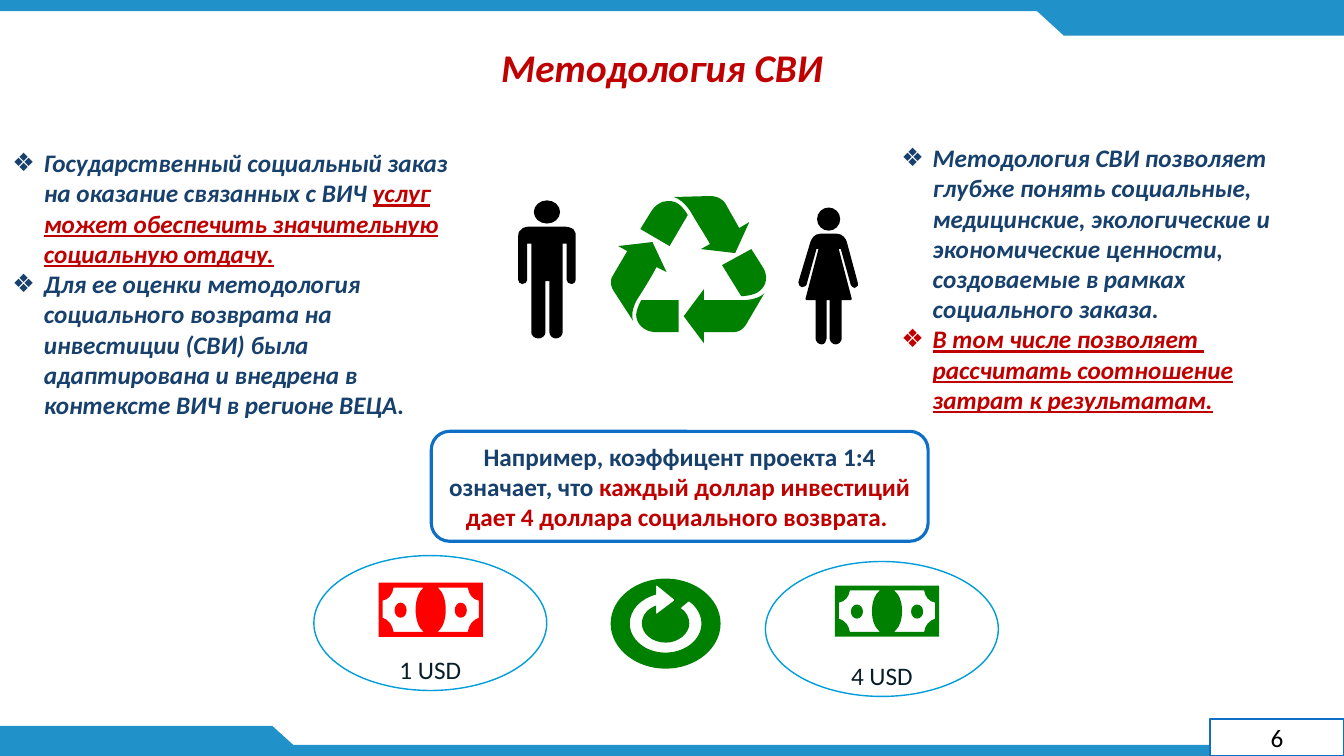
from lxml import etree
from pptx import Presentation
from pptx import util as u
from pptx.dml.color import RGBColor
from pptx.enum import shapes, text
from pptx.oxml.ns import qn

COLORS = {
    "band": "2191C9", "outline": "0F6FC6", "ellipse": "009DD9", "white": "FFFFFF",
    "navy": "17406D", "accent": "C00000", "ink": "071D28", "black": "000000",
    "green": "008000", "red": "FF0000",
}
SHAPE = shapes.MSO_SHAPE
CENTER = text.PP_ALIGN.CENTER


def add_run(paragraph, content, color="navy", size=18, **font_format):
    run = paragraph.add_run()
    run.text = content
    run.font.name = "Calibri"
    run.font.size = u.Pt(size)
    run.font.color.rgb = RGBColor.from_string(COLORS[color])
    for name, value in font_format.items():
        setattr(run.font, name, value)


def draw_icon(box, size, color, contours):
    """Scale contours drawn on a grid of the given size into a box in cm.

    A contour is a list of steps: 2 numbers are a point, 6 a Bézier curve
    from the last point, 4 an ellipse (centre and radii).
    """
    left, top, width, height = [u.Cm(value) for value in box]
    builder = None
    curve_starts = []  # positions in the path where three points form a curve
    position = 0
    for contour in contours:
        if len(contour[0]) == 4:
            cx, cy, rx, ry = contour[0]
            kx, ky = 0.55 * rx, 0.55 * ry
            contour = [(cx, cy - ry),
                       (cx + kx, cy - ry, cx + rx, cy - ky, cx + rx, cy),
                       (cx + rx, cy + ky, cx + kx, cy + ry, cx, cy + ry),
                       (cx - kx, cy + ry, cx - rx, cy + ky, cx - rx, cy),
                       (cx - rx, cy - ky, cx - kx, cy - ry, cx, cy - ry)]
        points = []
        for step in contour:
            if len(step) == 6:
                curve_starts.append(position + len(points))
            points += [(left + x * width / size[0], top + y * height / size[1])
                       for x, y in zip(step[::2], step[1::2])]
        if builder is None:
            builder = slide.shapes.build_freeform(*points[0], scale=1.0)
        else:
            builder.move_to(*points[0])
        builder.add_line_segments(points[1:], close=False)
        position += len(points)
    icon = builder.convert_to_shape()
    steps = list(icon._element.find(".//" + qn("a:path")))
    for start in curve_starts:
        curve = etree.Element(qn("a:cubicBezTo"))
        steps[start].addprevious(curve)
        for step in steps[start:start + 3]:
            curve.append(step[0])
            step.getparent().remove(step)
    icon.shadow.inherit = False
    icon.fill.solid()
    icon.fill.fore_color.rgb = RGBColor.from_string(COLORS[color])
    icon.line.fill.background()


presentation = Presentation()
presentation.slide_width, presentation.slide_height = u.Cm(33.87), u.Cm(19.05)
slide = presentation.slides.add_slide(presentation.slide_layouts.get_by_name("Two Content"))

# Header and footer bands
for kind, box, rotation in [
    (SHAPE.RECTANGLE, (0, 0, 33.87, 0.28), 0),
    (SHAPE.RECTANGLE, (0, 18.77, 33.87, 0.28), 0),
    (SHAPE.RECTANGLE, (26.8, 0.13, 7.07, 0.77), 0),
    (SHAPE.FLOWCHART_MERGE, (25.96, 0.12, 1.68, 0.77), 0),
    (SHAPE.RECTANGLE, (0, 18.29, 6.86, 0.76), 0),
    (SHAPE.FLOWCHART_MERGE, (6.02, 18.29, 1.68, 0.76), 180),
]:
    band = slide.shapes.add_shape(kind, *[u.Cm(value) for value in box])
    band.rotation = rotation
    band.shadow.inherit = False
    band.fill.solid()
    band.fill.fore_color.rgb = RGBColor.from_string(COLORS["band"])
    band.line.fill.background()

# Outlined boxes
callout_runs = [
    ("Например, коэффицент проекта 1:4 означает, что ", "navy", True),
    ("каждый доллар инвестиций дает 4 доллара социального возврата. ", "accent", True),
]
for kind, box, line_color, line_width, runs in [
    (SHAPE.FLOWCHART_CONNECTOR, (7.91, 14, 5.87, 3.4), "ellipse", 1, [("1 USD", "ink", False)]),
    (SHAPE.FLOWCHART_CONNECTOR, (19.29, 14.15, 5.87, 3.4), "ellipse", 1,
     [("4 USD", "ink", False)]),
    (SHAPE.ROUNDED_RECTANGLE, (10.87, 10.87, 12.52, 2.77), "outline", 2.25, callout_runs),
    (SHAPE.RECTANGLE, (30.49, 18.12, 3.38, 0.93), "outline", 1, [("6", "black", False)]),
]:
    panel = slide.shapes.add_shape(kind, *[u.Cm(value) for value in box])
    panel.shadow.inherit = False
    panel.fill.solid()
    panel.fill.fore_color.rgb = RGBColor.from_string(COLORS["white"])
    panel.line.color.rgb = RGBColor.from_string(COLORS[line_color])
    panel.line.width = u.Pt(line_width)
    panel.text_frame.vertical_anchor = text.MSO_ANCHOR.MIDDLE
    if kind == SHAPE.FLOWCHART_CONNECTOR:
        panel.text_frame.margin_top, panel.text_frame.margin_bottom = u.Cm(2.32), 0
    paragraph = panel.text_frame.paragraphs[0]
    paragraph.alignment = CENTER
    for content, color, bold in runs:
        add_run(paragraph, content, color, bold=bold)

# Icons
man = [
    [(28.5, 11.5, 13, 11.5)],
    [(13, 26), (8, 26, 4, 27, 3, 29), (0, 31, 0, 34, 0, 35), (0, 79), (0, 81, 2, 83, 4, 83),
     (7, 83, 9, 81, 9, 79), (9, 43), (13, 43), (13, 131), (13, 134, 16, 137, 20, 137),
     (24, 137, 27, 134, 27, 131), (27, 80), (31, 80), (31, 131), (31, 134, 34, 137, 37, 137),
     (41, 137, 44, 134, 44, 131), (44, 43), (48, 43), (48, 79), (48, 81, 50, 83, 53, 83),
     (55, 83, 57, 81, 57, 79), (57, 35), (57, 34, 57, 31, 55, 29), (53, 27, 49, 26, 44, 26)],
]
woman = [
    [(30, 11.5, 11.5, 11.5)],
    [(38, 26), (44, 26, 47, 31, 48, 34), (59, 75), (60, 77, 59, 79, 57, 79), (56, 80),
     (54, 80, 53, 78, 52, 77), (42, 41), (40, 41), (53, 91), (52, 92), (43, 92), (43, 130),
     (43, 133, 40, 136, 37, 136), (34, 136, 31, 133, 31, 130), (31, 92), (28, 92), (28, 130),
     (28, 133, 26, 136, 23, 136), (20, 136, 17, 133, 17, 130), (17, 92), (8, 92), (7, 91),
     (20, 41), (18, 41), (8, 77), (7, 78, 6, 79, 4, 79), (3, 79), (1, 79, 0, 76, 0, 74),
     (12, 34), (13, 31, 16, 26, 22, 26)],
]
recycling = [
    [(99, 0), (62, 1), (62, 1, 71, 3, 79, 16), (87, 30, 95, 42, 98, 48), (89, 53), (123, 57),
     (137, 26), (127, 32), (113, 7), (108, 0, 99, 0, 99, 0)],
    [(56, 5), (49, 5, 43, 10, 40, 15), (29, 33), (58, 50), (76, 19), (76, 19, 70, 8, 63, 6),
     (61, 5, 58, 5, 56, 5)],
    [(41, 46), (7, 50), (16, 55), (2, 79), (-3, 86, 2, 94, 2, 94), (22, 125),
     (22, 125, 18, 117, 26, 103), (35, 89, 42, 77, 45, 71), (55, 76)],
    [(139, 53), (110, 69), (129, 100), (129, 100, 141, 100, 147, 95), (155, 89, 155, 79, 151, 72)],
    [(92, 93), (72, 120), (92, 147), (92, 136), (121, 136), (130, 136, 134, 128, 134, 128),
     (152, 97), (152, 97, 146, 104, 130, 104), (114, 104, 99, 104, 92, 104)],
    [(30, 104), (30, 104, 24, 114, 25, 121), (27, 131, 36, 136, 45, 136), (67, 136), (67, 104)],
]
exchange = [
    [(54.5, 45, 54.5, 45)],
    [(45, 7), (46, 7), (63, 21), (63, 22), (46, 35), (45, 35), (45, 27), (37, 30, 31, 36, 31, 45),
     (31, 55, 41, 64, 55, 64), (67, 64, 78, 55, 78, 45), (78, 39, 75, 33, 70, 30), (70, 29),
     (77, 23), (78, 23), (85, 28, 90, 36, 90, 45), (90, 61, 74, 74, 54, 74),
     (35, 74, 19, 61, 19, 45), (19, 31, 30, 20, 45, 16)],
]
note_left = [(15, 5), (45, 5), (40, 9, 37, 17, 37, 27), (37, 37, 40, 45, 45, 49), (15, 49),
             (14, 42, 10, 37, 4, 35), (4, 18), (10, 17, 14, 12, 15, 5)]
note_right = [tuple(value if i % 2 else 104 - value for i, value in enumerate(step))
              for step in note_left]
banknote = [[(0, 0), (104, 0), (104, 54), (0, 54)], note_left, note_right,
            [(22, 27.5, 6, 7.5)], [(82, 27.5, 6, 7.5)]]
for box, size, color, contours in [
    ((13.06, 5.05, 1.45, 3.48), (57, 137), "black", man),
    ((15.4, 4.94, 3.89, 3.71), (153, 147), "green", recycling),
    ((20.12, 5.23, 1.5, 3.45), (59, 136), "black", woman),
    ((9.54, 14.68, 2.63, 1.37), (104, 54), "red", banknote),
    ((15.39, 14.58, 2.77, 2.27), (109, 90), "green", exchange),
    ((21.04, 14.76, 2.63, 1.28), (104, 54), "green", banknote),
]:
    draw_icon(box, size, color, contours)

# Title and bullet lists
title, left_list, right_list = slide.placeholders
title.left, title.top, title.width, title.height = u.Cm(5.36), u.Cm(1.07), u.Cm(22.63), u.Cm(1.4)
title.text_frame.vertical_anchor = text.MSO_ANCHOR.MIDDLE
heading = title.text_frame.paragraphs[0]
heading.alignment = CENTER
heading.line_spacing = 0.9
add_run(heading, "Методология СВИ", "accent", size=28, bold=True, italic=True)

left_items = [
    [("Государственный социальный заказ на оказание связанных с ВИЧ ", False),
     ("услуг может обеспечить значительную социальную отдачу.", True)],
    [("Для ее оценки методология социального возврата на инвестиции (СВИ) была "
      "адаптирована и внедрена в контексте ВИЧ в регионе ВЕЦА.", False)],
]
right_items = [
    [("Методология СВИ позволяет глубже понять социальные, медицинские, экологические и "
      "экономические ценности, создоваемые в рамках социального заказа.", False)],
    [("В том числе позволяет  рассчитать соотношение затрат к результатам.", True)],
]
for body, left, top, width, items in [(left_list, 0.06, 3.59, 11.79, left_items),
                                      (right_list, 22.46, 3.46, 11, right_items)]:
    body.left, body.top, body.width, body.height = u.Cm(left), u.Cm(top), u.Cm(width), u.Cm(7.19)
    frame = body.text_frame
    frame.auto_size = text.MSO_AUTO_SIZE.NONE
    for index, item in enumerate(items):
        paragraph = frame.add_paragraph() if index else frame.paragraphs[0]
        paragraph.space_before = u.Pt(0)
        properties = paragraph._p.get_or_add_pPr()
        properties.set("marL", str(u.Cm(0.79)))
        properties.set("indent", str(-u.Cm(0.79)))
        etree.SubElement(properties, qn("a:buChar"), char="❖")
        for content, stressed in item:
            add_run(paragraph, content, "accent" if stressed else "navy",
                    bold=True, italic=True, underline=stressed)

presentation.save("out.pptx")
